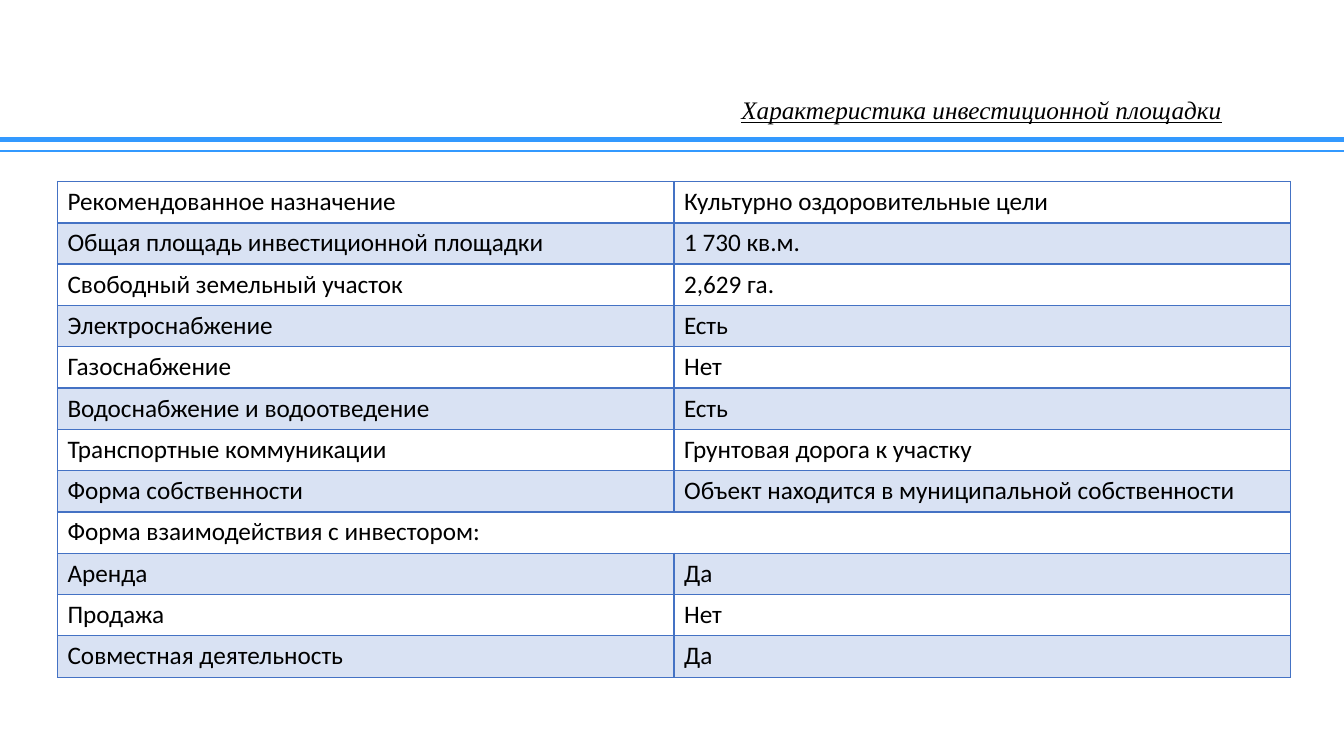
from dataclasses import dataclass

from lxml import etree
from pptx import Presentation
from pptx.dml.color import RGBColor
from pptx.enum.shapes import MSO_CONNECTOR
from pptx.enum.text import MSO_ANCHOR, PP_ALIGN
from pptx.oxml.ns import qn
from pptx.util import Inches, Pt

STRAIGHT = MSO_CONNECTOR.STRAIGHT
MIDDLE = MSO_ANCHOR.MIDDLE
CENTER = PP_ALIGN.CENTER

TITLE = "Характеристика инвестиционной площадки"
# A row with one entry spans both columns.
SITE_FACTS = [
    ("Рекомендованное назначение", "Культурно оздоровительные цели"),
    ("Общая площадь инвестиционной площадки", "1 730 кв.м."),
    ("Свободный земельный участок", "2,629 га."),
    ("Электроснабжение", "Есть"),
    ("Газоснабжение", "Нет"),
    ("Водоснабжение и водоотведение", "Есть"),
    ("Транспортные коммуникации", "Грунтовая дорога к участку"),
    ("Форма собственности", "Объект находится в муниципальной собственности"),
    ("Форма взаимодействия с инвестором:",),
    ("Аренда", "Да"),
    ("Продажа", "Нет"),
    ("Совместная деятельность", "Да"),
]
HEADER_RULES = [(1.38, 3.5), (1.5, 1.5)]  # top in inches, width in points


@dataclass(frozen=True)
class Theme:
    rule: str = "3399FF"
    accent: str = "4472C4"
    text: str = "000000"
    band_opacity: int = 20
    size: int = 18
    title_font: str = "Times New Roman"
    body_font: str = "Calibri"


THEME = Theme()
SLIDE_W, SLIDE_H = 13.33, 7.5
TABLE_LEFT, TABLE_TOP, TABLE_W, ROW_H = 0.57, 1.8, 12.23, 0.41


def add_run(paragraph, text, font_name):
    run = paragraph.add_run()
    run.text = text
    run.font.name = font_name
    run.font.size = Pt(THEME.size)
    run.font.color.rgb = RGBColor.from_string(THEME.text)
    return run


def add_header_rule(slide, top, width):
    rule = slide.shapes.add_connector(
        STRAIGHT, 0, Inches(top), Inches(SLIDE_W), Inches(top))
    rule.line.color.rgb = RGBColor.from_string(THEME.rule)
    rule.line.width = Pt(width)
    properties = rule._element.spPr
    etree.SubElement(properties, qn("a:effectLst"))


def add_title(slide):
    title = slide.shapes.title
    title.left, title.top = Inches(6.67), Inches(0.97)
    title.width, title.height = Inches(6.13), Inches(0.27)
    frame = title.text_frame
    frame.word_wrap = True
    frame.vertical_anchor = MIDDLE
    frame.margin_top = frame.margin_bottom = 0
    paragraph = frame.paragraphs[0]
    paragraph.alignment = CENTER
    paragraph.line_spacing = 0.9
    run = add_run(paragraph, TITLE, THEME.title_font)
    run.font.italic = True
    run.font.underline = True


def set_borders(cell, top, bottom):
    """Draw the four cell borders, with top and bottom widths in points."""
    properties = cell._tc.get_or_add_tcPr()
    widths = {"a:lnL": 1, "a:lnR": 1, "a:lnT": top, "a:lnB": bottom}
    for position, (side, width) in enumerate(widths.items()):
        border = etree.Element(qn(side), w=str(Pt(width)))
        fill = etree.SubElement(border, qn("a:solidFill"))
        etree.SubElement(fill, qn("a:srgbClr"), val=THEME.accent)
        properties.insert(position, border)


def fill_cell(cell, banded):
    if not banded:
        cell.fill.background()
        return
    cell.fill.solid()
    cell.fill.fore_color.rgb = RGBColor.from_string(THEME.accent)
    color = cell._tc.tcPr.find(".//" + qn("a:srgbClr"))
    etree.SubElement(color, qn("a:alpha"), val=str(THEME.band_opacity * 1000))


def add_facts_table(slide):
    table = slide.shapes.add_table(
        len(SITE_FACTS), 2, Inches(TABLE_LEFT), Inches(TABLE_TOP),
        Inches(TABLE_W), Inches(ROW_H * len(SITE_FACTS))).table
    table.first_row = False
    table.horz_banding = False
    for column in table.columns:
        column.width = Inches(TABLE_W / 2)
    for index, facts in enumerate(SITE_FACTS):
        table.rows[index].height = Inches(ROW_H)
        for side in range(2):
            cell = table.cell(index, side)
            fill_cell(cell, banded=index % 2 == 1)
            set_borders(cell, top=2 if index == 1 else 1,
                        bottom=2 if index == 0 else 1)
        for side, fact in enumerate(facts):
            paragraph = table.cell(index, side).text_frame.paragraphs[0]
            add_run(paragraph, fact, THEME.body_font)
        if len(facts) == 1:
            table.cell(index, 0).merge(table.cell(index, 1))


def main():
    presentation = Presentation()
    presentation.slide_width = Inches(SLIDE_W)
    presentation.slide_height = Inches(SLIDE_H)
    title_only = presentation.slide_layouts[5]
    slide = presentation.slides.add_slide(title_only)
    for top, width in HEADER_RULES:
        add_header_rule(slide, top, width)
    add_title(slide)
    add_facts_table(slide)
    presentation.save("out.pptx")


if __name__ == "__main__":
    main()
